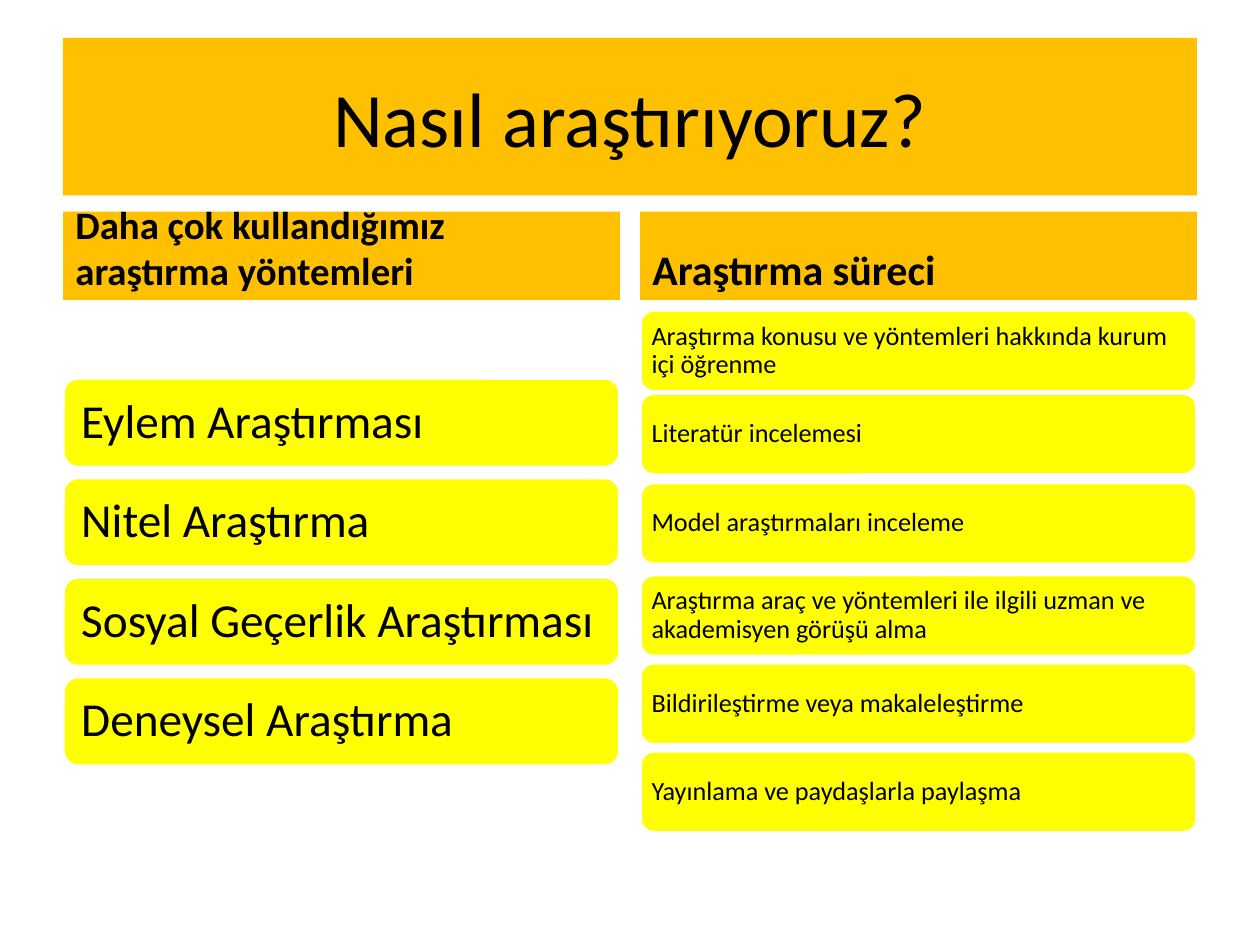
from pptx import Presentation
from pptx.dml.color import RGBColor
from pptx.enum.shapes import MSO_SHAPE as Shape
from pptx.enum.text import MSO_ANCHOR as Anchor, PP_ALIGN as Align
from pptx.util import Inches, Pt

FONT, BLACK, WHITE, AMBER, YELLOW = "Calibri", "000000", "FFFFFF", "FFC000", "FFFF00"
TITLE = "Nasıl araştırıyoruz?"
LEFT, COLUMN_W, COLUMN_STEP = 0.5, 4.42, 4.58
METHOD_TOP, METHOD_STEP = 3, 0.79

METHODS = [
    "Eylem Araştırması",
    "Nitel Araştırma",
    "Sosyal Geçerlik Araştırması",
    "Deneysel Araştırma",
]
STEPS = [
    (2.46, "Araştırma konusu ve yöntemleri hakkında kurum içi öğrenme"),
    (3.12, "Literatür incelemesi"),
    (3.83, "Model araştırmaları inceleme"),
    (4.56, "Araştırma araç ve yöntemleri ile ilgili uzman ve akademisyen görüşü alma"),
    (5.26, "Bildirileştirme veya makaleleştirme"),
    (5.96, "Yayınlama ve paydaşlarla paylaşma"),
]
COLUMNS = [
    dict(heading="Daha çok kullandığımız araştırma yöntemleri", heading_size=22.2,
         height=0.71, size=27, inset=0.11,
         cards=[(METHOD_TOP + i * METHOD_STEP, text) for i, text in enumerate(METHODS)]),
    dict(heading="Araştırma süreci", heading_size=24,
         height=0.65, size=15, inset=0.06, cards=STEPS),
]


def rgb(value):
    return RGBColor.from_string(value)


def add_box(s, kind, box, fill, text, size, anchor=Anchor.MIDDLE,
            align=Align.LEFT, bold=False, insets=(0.1, 0.05)):
    sp = s.shapes.add_shape(kind, *map(Inches, box))
    sp.shadow.inherit = False
    sp.fill.solid()
    sp.fill.fore_color.rgb = rgb(fill)
    sp.line.fill.background()
    tf = sp.text_frame
    tf.word_wrap = True
    tf.vertical_anchor = anchor
    tf.margin_left = tf.margin_right = Inches(insets[0])
    tf.margin_top = tf.margin_bottom = Inches(insets[1])
    p = tf.paragraphs[0]
    p.alignment = align
    r = p.add_run()
    r.text = text
    r.font.name, r.font.size, r.font.bold = FONT, Pt(size), bold
    r.font.color.rgb = rgb(BLACK)
    return sp


def add_card(s, box, text, size, inset):
    sp = add_box(s, Shape.ROUNDED_RECTANGLE, box, YELLOW, text, size,
                 insets=(inset, inset))
    sp.line.color.rgb = rgb(WHITE)
    sp.line.width = Pt(2)
    sp.text_frame.paragraphs[0].line_spacing = 0.9


def main():
    prs = Presentation()
    prs.slide_width, prs.slide_height = Inches(10), Inches(7.5)
    s = prs.slides.add_slide(prs.slide_layouts[6])
    add_box(s, Shape.RECTANGLE, (LEFT, 0.3, 9, 1.25), AMBER, TITLE, 44,
            align=Align.CENTER)
    for i, col in enumerate(COLUMNS):
        x = LEFT + i * COLUMN_STEP
        add_box(s, Shape.RECTANGLE, (x, 1.68, COLUMN_W, 0.7), AMBER, col["heading"],
                col["heading_size"], anchor=Anchor.BOTTOM, bold=True)
        for y, text in col["cards"]:
            add_card(s, (x, y, COLUMN_W, col["height"]), text, col["size"], col["inset"])
    prs.save("out.pptx")


if __name__ == "__main__":
    main()
